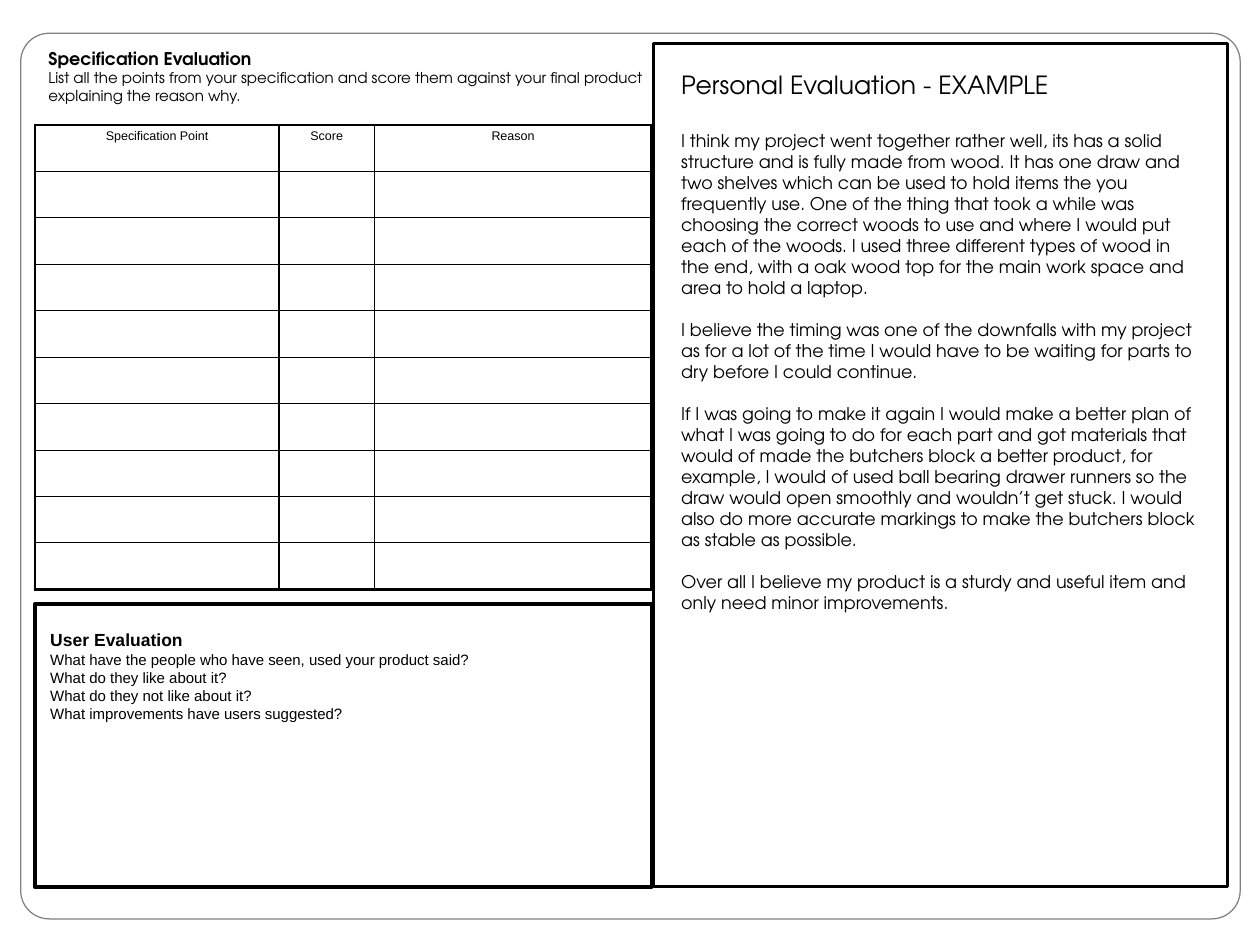
from lxml import etree
from pptx import Presentation
from pptx.dml.color import RGBColor
from pptx.enum.shapes import MSO_SHAPE
from pptx.enum.text import PP_ALIGN
from pptx.oxml.ns import qn
from pptx.util import Inches, Pt

RECT, ROUND = MSO_SHAPE.RECTANGLE, MSO_SHAPE.ROUNDED_RECTANGLE
CENTER = PP_ALIGN.CENTER
COLORS = {"ink": "000000", "edge": "808080"}
SANS, ROUNDED = "Arial", "TeX Gyre Adventor"
THIN, THICK = 1, 2.25

HEADS = ["Specification Point", "Score", "Reason"]
WIDTHS = [2.71, 1.06, 3.08]
ROWS = 10
SPEC_HINT = ("List all the points from your specification and score them "
             "against your final product explaining the reason why.")
ASKS = [
    "What have the people who have seen, used your product said?",
    "What do they like about it?",
    "What do they not like about it?",
    "What improvements have users suggested?",
]
STORY = [
    "I think my project went together rather well, its has a solid structure "
    "and is fully made from wood. It has one draw and two shelves which can be "
    "used to hold items the you frequently use. One of the thing that took a "
    "while was choosing the correct woods to use and where I would put each of "
    "the woods. I used three different types of wood in the end, with a oak "
    "wood top for the main work space and area to hold a laptop.",
    "I believe the timing was one of the downfalls with my project as for a "
    "lot of the time I would have to be waiting for parts to dry before I "
    "could continue.",
    "If I was going to make it again I would make a better plan of what I was "
    "going to do for each part and got materials that would of made the "
    "butchers block a better product, for example, I would of used ball "
    "bearing drawer runners so the draw would open smoothly and wouldn’t get "
    "stuck. I would also do more accurate markings to make the butchers block "
    "as stable as possible.",
    "Over all I believe my product is a sturdy and useful item and only need "
    "minor improvements.",
]


def style(para, face, size, bold=False):
    font = para.font
    font.name, font.size, font.bold = face, Pt(size), bold
    font.color.rgb = RGBColor.from_string(COLORS["ink"])


def add_frame(slide, box, weight, color="ink", kind=RECT):
    """Draw an unfilled outline and return it."""
    shape = slide.shapes.add_shape(kind, *map(Inches, box))
    shape.shadow.inherit = False
    shape.fill.background()
    shape.line.color.rgb = RGBColor.from_string(COLORS[color])
    shape.line.width = Pt(weight)
    return shape


def add_text(slide, box, lines, face, size, title=None, gap=0):
    """Write lines as paragraphs, below a bold title if there is one."""
    frame = slide.shapes.add_textbox(*map(Inches, box)).text_frame
    frame.word_wrap = True
    frame.text = "\n".join(([title] if title else []) + lines)
    for i, para in enumerate(frame.paragraphs):
        head = bool(title) and i == 0
        style(para, face, 14 if head else size, head)
        para.space_after = Pt(gap)


def set_edges(cell, sides):
    """Set border widths in points, given by side in the order L, R, T, B."""
    props = cell._tc.get_or_add_tcPr()
    for side, weight in sides.items():
        line = etree.SubElement(props, qn("a:ln" + side), w=str(Pt(weight)))
        fill = etree.SubElement(line, qn("a:solidFill"))
        etree.SubElement(fill, qn("a:srgbClr"), val=COLORS["ink"])
    cell.fill.background()


def add_grid(slide, box):
    """Add the score table, with a heavier rim than its inner lines."""
    cols = len(HEADS)
    table = slide.shapes.add_table(ROWS, cols, *map(Inches, box)).table
    table.first_row = table.horz_banding = False
    for col, width in zip(table.columns, WIDTHS):
        col.width = Inches(width)
    for r in range(ROWS):
        for c in range(cols):
            rims = {"L": c == 0, "R": c == cols - 1,
                    "T": r == 0, "B": r == ROWS - 1}
            set_edges(table.cell(r, c),
                      {s: THICK if rim else THIN for s, rim in rims.items()})
    for c, head in enumerate(HEADS):
        cell = table.cell(0, c)
        cell.text = head
        para = cell.text_frame.paragraphs[0]
        style(para, SANS, 10)
        para.alignment = CENTER
        para.space_before = Pt(2)


def add_spec(slide, box):
    x, y, w, h = box
    add_text(slide, (x + 0.05, y, 6.93, 0.74), [SPEC_HINT], ROUNDED, 12,
             title="Specification Evaluation")
    add_grid(slide, (x, y + 0.91, w, h - 0.91))


def add_user(slide, box):
    x, y, w, h = box
    add_frame(slide, box, 3)
    add_text(slide, (x + 0.07, y + 0.23, 5.51, 1.13), ASKS, SANS, 12,
             title="User Evaluation")


def add_personal(slide, box):
    x, y, w, h = box
    add_frame(slide, box, THICK)
    add_text(slide, (x + 0.21, y + 0.24, w - 0.24, 0.44),
             ["Personal Evaluation - EXAMPLE"], ROUNDED, 20)
    add_text(slide, (x + 0.21, y + 0.91, w - 0.39, 5.52), STORY, ROUNDED, 14,
             gap=16.8)


def main():
    deck = Presentation()
    deck.slide_width, deck.slide_height = Inches(14), Inches(10.5)
    slide = deck.slides.add_slide(deck.slide_layouts[6])
    border = add_frame(slide, (0.23, 0.37, 13.55, 9.84), 1, "edge", ROUND)
    border.adjustments[0] = 0.032
    add_spec(slide, (0.39, 0.48, 6.85, 6.07))
    add_user(slide, (0.39, 6.71, 6.85, 3.15))
    add_personal(slide, (7.26, 0.48, 6.38, 9.37))
    deck.save("out.pptx")


if __name__ == "__main__":
    main()
